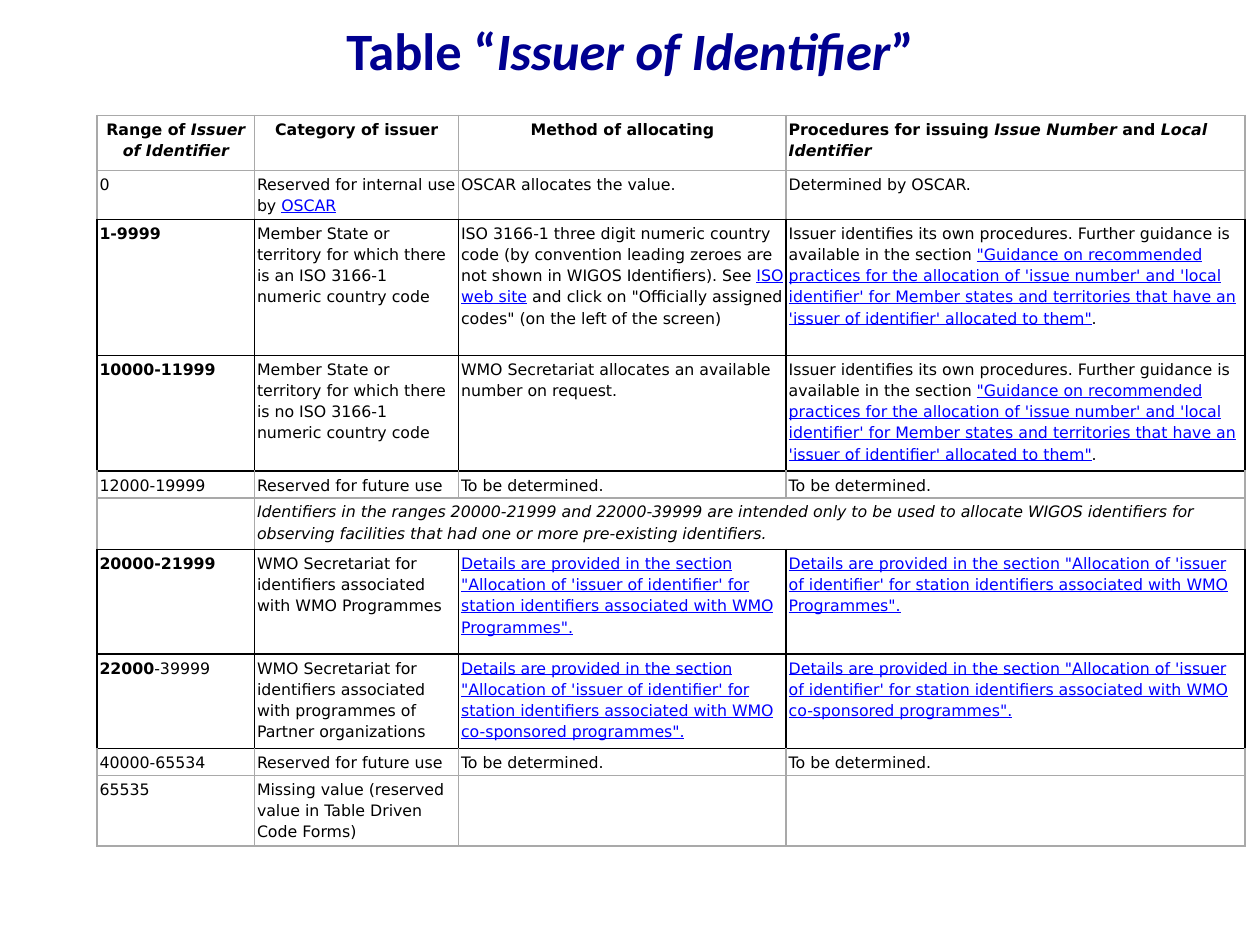
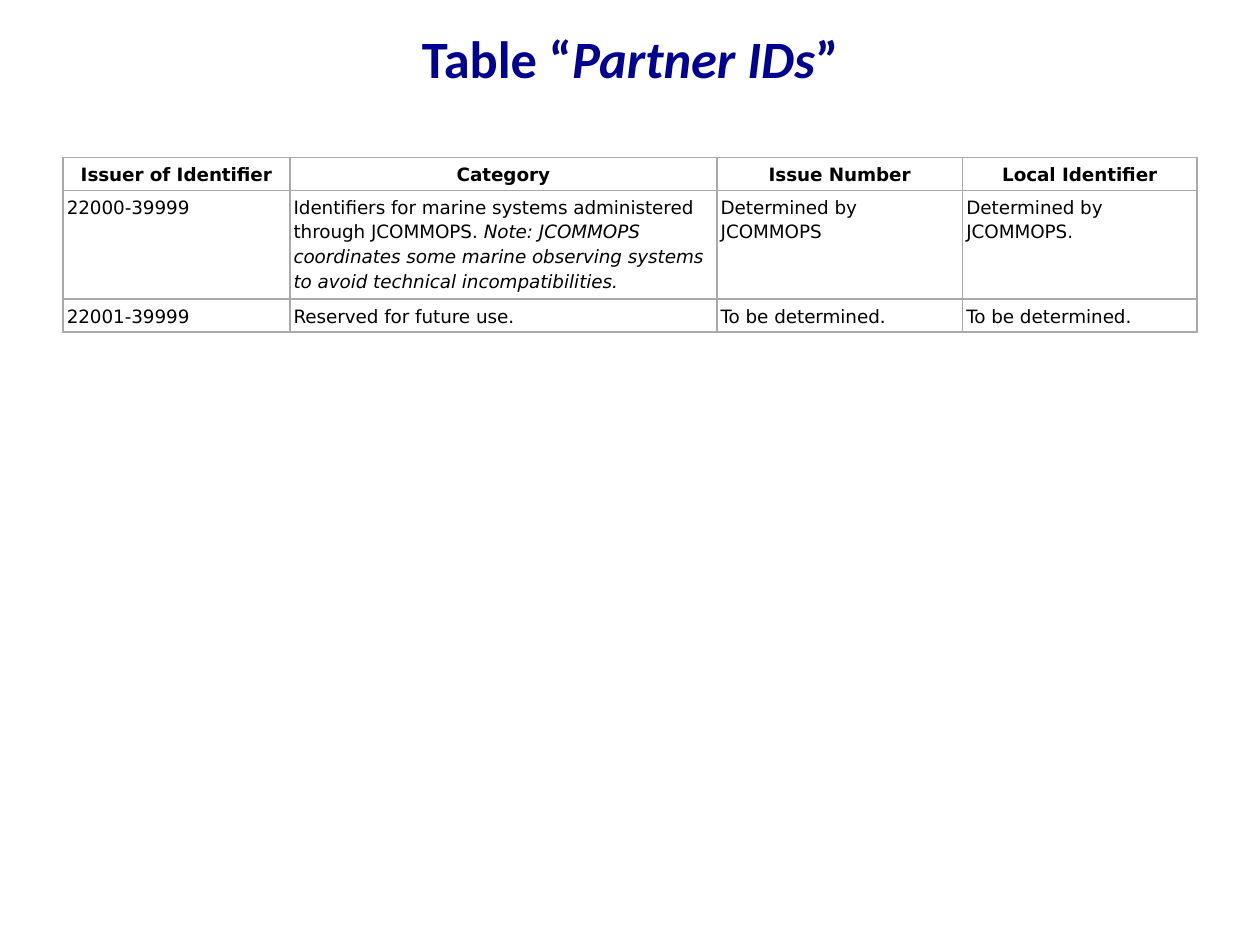
from lxml.etree import SubElement
from pptx import Presentation
from pptx.dml.color import RGBColor
from pptx.enum.text import MSO_ANCHOR, PP_ALIGN
from pptx.oxml.ns import qn
from pptx.util import Inches, Pt

WIDE, HIGH = 10, 7.5
COLS = 100
NAVY, BLACK, GREY, LINK = "000090", "000000", "A9A9A9", "0000FF"
HEAD, BODY = "Calibri", "DejaVu Sans"

FUTURE = "Reserved for future use"
LATER = "To be determined."
GUIDE = (
    "Issuer identifies its own procedures. Further guidance is available in the section "
    "|_\"Guidance on recommended practices for the allocation of 'issue number' and "
    "'local identifier' for Member states and territories that have an "
    "'issuer of identifier' allocated to them\"|."
)
MEMBER = "Member State or territory for which there is {} ISO 3166-1 numeric country code"
PARTNER = "WMO Secretariat for identifiers associated with {}"
DETAIL = (
    "_Details are provided in the section \"Allocation of 'issuer of identifier' "
    "for station identifiers associated with WMO {}\"."
)

ISSUERS = [
    ["Range of |/Issuer of Identifier", "Category of issuer", "Method of allocating",
     "Procedures for issuing |/Issue Number| and |/Local Identifier"],
    ["0", "Reserved for internal use by |_OSCAR",
     "OSCAR allocates the value.", "Determined by OSCAR."],
    ["*1-9999", MEMBER.format("an"),
     "ISO 3166-1 three digit numeric country code (by convention leading zeroes are "
     "not shown in WIGOS Identifiers). See |_ISO web site| and click on "
     "\"Officially assigned codes\" (on the left of the screen)", GUIDE],
    ["*10000-11999", MEMBER.format("no"),
     "WMO Secretariat allocates an available number on request.", GUIDE],
    ["12000-19999", FUTURE, LATER, LATER],
    ["", "/Identifiers in the ranges 20000-21999 and 22000-39999 are intended only to be "
     "used to allocate WIGOS identifiers for observing facilities that had one or more "
     "pre-existing identifiers.", "", ""],
    ["*20000-21999", PARTNER.format("with WMO Programmes").replace("with with", "with")]
    + [DETAIL.format("Programmes")] * 2,
    ["*22000|-39999", PARTNER.format("with programmes of Partner organizations")
     .replace("with with", "with")] + [DETAIL.format("co-sponsored programmes")] * 2,
    ["40000-65534", FUTURE, LATER, LATER],
    ["65535", "Missing value (reserved value in Table Driven Code Forms)", "", ""],
]
DARK = {2, 3, 6, 7}
NOTE = 5

PARTNERS = [
    ["Issuer of Identifier", "Category", "Issue Number", "Local Identifier"],
    ["22000-39999",
     "Identifiers for marine systems administered through JCOMMOPS. "
     "|/Note: JCOMMOPS coordinates some marine observing systems to avoid "
     "technical incompatibilities.",
     "Determined by JCOMMOPS", "Determined by JCOMMOPS."],
    ["22001-39999", FUTURE + ".", LATER, LATER],
]


def color(code):
    """Turn a hex string into a colour."""
    return RGBColor.from_string(code)


def grid(count):
    """Turn a count of grid columns into a length."""
    return Inches(count * WIDE / COLS)


def style(para, size, face, code, bold):
    """Set the font of a whole paragraph."""
    font = para.font
    font.size, font.name, font.bold = Pt(size), face, bold
    font.color.rgb = color(code)


def write(para, text):
    """Add runs split at bars, led by * bold, / italic or _ link."""
    for part in filter(None, text.split("|")):
        run = para.add_run()
        mark = part[0]
        run.text = part[1:] if mark in "*/_" else part
        if mark == "*":
            run.font.bold = True
        elif mark == "/":
            run.font.italic = True
        elif mark == "_":
            run.font.underline = True
            run.font.color.rgb = color(LINK)


def title(slide, text, box):
    """Place the centred slide title in its box."""
    frame = slide.shapes.add_textbox(*map(grid, box)).text_frame
    frame.word_wrap = True
    frame.vertical_anchor = MSO_ANCHOR.MIDDLE
    para = frame.paragraphs[0]
    para.alignment = PP_ALIGN.CENTER
    style(para, 30, HEAD, NAVY, True)
    write(para, text)


def border(cell, edges):
    """Draw the left, right, top and bottom lines of a cell."""
    props = cell._tc.get_or_add_tcPr()
    for spot, (side, code) in enumerate(zip("LRTB", edges)):
        line = SubElement(props, qn("a:ln" + side), w=str(Pt(1)))
        fill = SubElement(line, qn("a:solidFill"))
        SubElement(fill, qn("a:srgbClr"), val=code)
        props.insert(spot, line)


def fill(cell, text, size, inset, align, bold):
    """Fill one cell with styled text."""
    cell.fill.background()
    cell.margin_left = cell.margin_right = grid(inset)
    cell.margin_top = cell.margin_bottom = grid(inset)
    para = cell.text_frame.paragraphs[0]
    para.alignment = align
    para.line_spacing = 1.15
    para.space_before = para.space_after = Pt(1)
    style(para, size, BODY, BLACK, bold)
    write(para, text)


def table(slide, data, spot, widths, heights, size, inset, dark=()):
    """Place a ruled table whose dark rows have black lines."""
    frame = slide.shapes.add_table(
        len(data), len(widths), *map(grid, (*spot, sum(widths), sum(heights))))
    board = frame.table
    board.first_row = board.horz_banding = False
    for col, width in zip(board.columns, widths):
        col.width = grid(width)
    for row, height in zip(board.rows, heights):
        row.height = grid(height)
    for r, texts in enumerate(data):
        side, top, base = (
            BLACK if dark & near else GREY for near in ({r}, {r - 1, r, }, {r, r + 1})
        ) if dark else (GREY,) * 3
        for c, text in enumerate(texts):
            align = PP_ALIGN.LEFT if c else PP_ALIGN.JUSTIFY
            if r == 0 and not text.startswith("Procedures"):
                align = PP_ALIGN.CENTER
            cell = board.cell(r, c)
            fill(cell, text, size, inset, align, r == 0)
            border(cell, (side, side, top, base))
    return board


def issuers(slide):
    """Build the slide on issuers of identifiers."""
    title(slide, "Table “|/Issuer of Identifier|”", (5, 0.9, 90, 6.1))
    board = table(
        slide, ISSUERS, (7.7, 9.15), (12.5, 16.2, 26, 36.4),
        (4.4, 3.7, 10.8, 9.2, 2, 4.1, 8.3, 7.5, 2, 5.4), 9, 0.2, DARK)
    board.cell(NOTE, 1).merge(board.cell(NOTE, 3))


def partners(slide):
    """Build the slide on partner identifiers."""
    title(slide, "Table “|/Partner IDs|”", (5, 1.5, 90, 6.1))
    table(slide, PARTNERS, (5, 12.5), (18, 33.9, 19.5, 18.6),
          (2.6, 8.5, 2.6), 10.5, 0.3)


def main():
    """Build and save the deck."""
    deck = Presentation()
    deck.slide_width, deck.slide_height = Inches(WIDE), Inches(HIGH)
    for build in (issuers, partners):
        build(deck.slides.add_slide(deck.slide_layouts[6]))
    deck.save("out.pptx")


if __name__ == "__main__":
    main()
